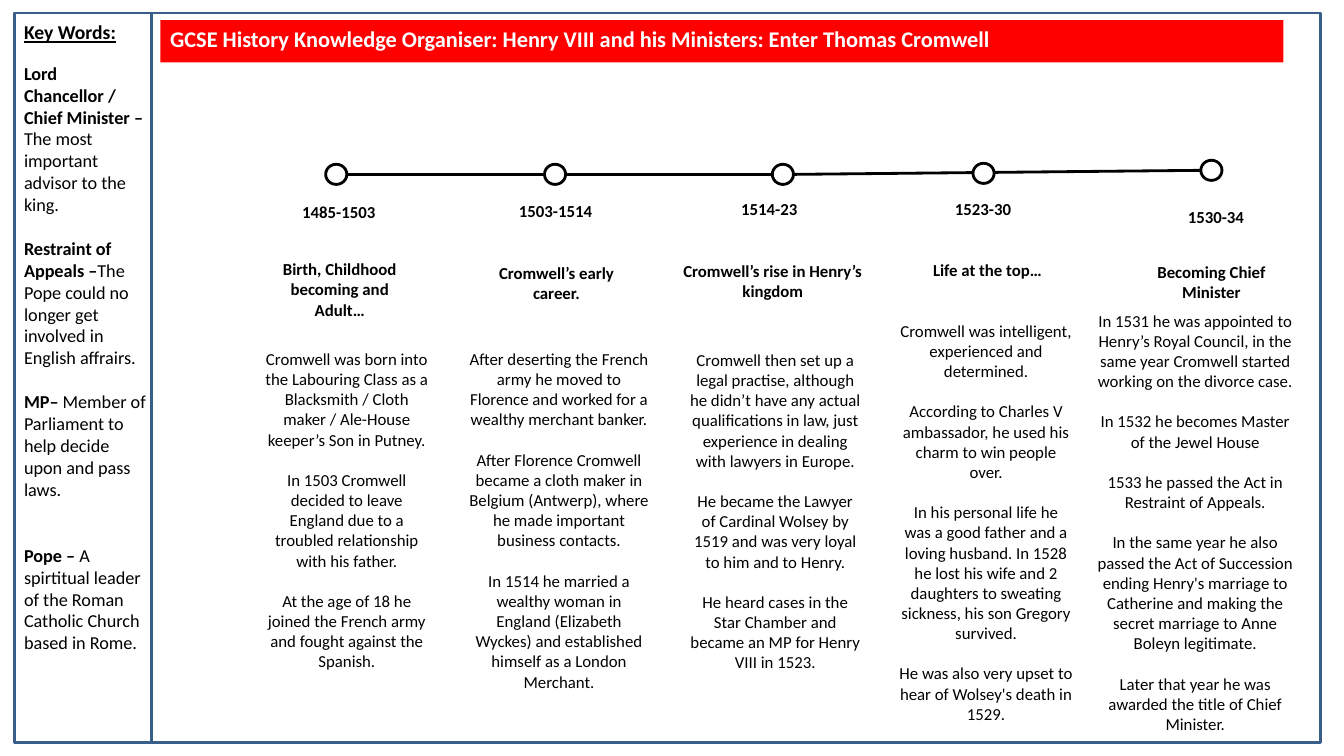
from pptx import Presentation
from pptx.dml.color import RGBColor
from pptx.enum.shapes import MSO_CONNECTOR, MSO_SHAPE
from pptx.enum.text import MSO_ANCHOR, PP_ALIGN
from pptx.oxml.ns import qn
from pptx.util import Inches, Pt
from lxml import etree

# Content
TITLE = "GCSE History Knowledge Organiser: Henry VIII and his Ministers: Enter Thomas Cromwell"
KEY_HEADING = "Key Words:"
# term, meaning, space after in points
KEY_WORDS = [
    ("Lord Chancellor / Chief Minister – ", "The most important advisor to the king.", 15.8),
    ("Restraint of Appeals –", "The Pope could no longer get involved in English affrairs.", 15.8),
    ("MP– ", "Member of Parliament to help decide upon and pass laws.", 31.6),
    ("Pope – ", "A spirtitual leader of the Roman Catholic Church based in Rome.", 0),
]
# Each stage: marker (left, top), then (text, box) for date, heading and story
STAGES = [
    {"marker": (3.23, 1.63),
     "date": ("1485-1503", (2.64, 1.95, 1.44, 0.33)),
     "heading": ("Birth, Childhood becoming and Adult…", (2.65, 2.52, 1.44, 1.02)),
     "story": ([
         "Cromwell was born into the Labouring Class as a Blacksmith / Cloth maker / "
         "Ale-House keeper’s Son in Putney.",
         "In 1503 Cromwell decided to leave England due to a troubled relationship with his father.",
         "At the age of 18 he joined the French army and fought against the Spanish.",
     ], (2.53, 3.41, 1.82, 3.27))},
    {"marker": (5.4, 1.63),
     "date": ("1503-1514", (4.79, 1.94, 1.44, 0.33)),
     "heading": ("Cromwell’s early career.", (4.8, 2.56, 1.44, 0.36)),
     "story": ([
         "After deserting the French army he moved to Florence and worked for a wealthy "
         "merchant banker.",
         "After Florence Cromwell became a cloth maker in Belgium (Antwerp), where he made "
         "important business contacts.",
         "In 1514 he married a wealthy woman in England (Elizabeth Wyckes) and established "
         "himself as a London Merchant.",
     ], (4.55, 3.41, 1.99, 3.39))},
    {"marker": (7.66, 1.63),
     "date": ("1514-23", (6.91, 1.92, 1.44, 0.33)),
     "heading": ("Cromwell’s rise in Henry’s kingdom", (6.55, 2.54, 2.23, 0.88)),
     "story": ([
         "Cromwell then set up a legal practise, although he didn’t have any actual "
         "qualifications in law, just experience in dealing with lawyers in Europe.",
         "He became the Lawyer of Cardinal Wolsey by 1519 and was very loyal to him and to Henry.",
         "He heard cases in the Star Chamber and became an MP for Henry VIII in 1523.",
     ], (6.74, 3.42, 1.9, 3.39))},
    {"marker": (9.65, 1.62),
     "date": ("1523-30", (9.03, 1.92, 1.44, 0.33)),
     "heading": ("Life at the top…", (8.68, 2.53, 2.23, 0.88)),
     "story": ([
         "Cromwell was intelligent, experienced and determined.",
         "According to Charles V ambassador, he used his charm to win people over.",
         "In his personal life he was a good father and a loving husband. In 1528 he lost his "
         "wife and 2 daughters to sweating sickness, his son Gregory survived.",
         "He was also very upset to hear of Wolsey's death in 1529.",
     ], (8.82, 3.13, 1.92, 3.39))},
    {"marker": (11.91, 1.59),
     "date": ("1530-34", (11.34, 2, 1.44, 0.33)),
     "heading": ("Becoming Chief Minister", (11.21, 2.55, 1.61, 0.36)),
     "story": ([
         "In 1531 he was appointed to Henry’s Royal Council, in the same year Cromwell started "
         "working on the divorce case.",
         "In 1532 he becomes Master of the Jewel House",
         "1533 he passed the Act in Restraint of Appeals.",
         "In the same year he also passed the Act of Succession ending Henry's marriage to "
         "Catherine and making the secret marriage to Anne Boleyn legitimate.",
         "Later that year he was awarded the title of Chief Minister.",
     ], (10.74, 3.03, 2.23, 4.3))},
]

FONT = "Calibri"
BLACK = RGBColor(0, 0, 0)
WHITE = RGBColor(255, 255, 255)
RED = RGBColor(255, 0, 0)
BLUE = RGBColor(0x39, 0x5E, 0x89)
MARKER_W, MARKER_H = 0.21, 0.2
STORY_GAP = 14.4  # about one line of 12 pt text

prs = Presentation()
prs.slide_width, prs.slide_height = Inches(13.33), Inches(7.5)
s = prs.slides.add_slide(prs.slide_layouts[6])


def add_shape(kind, box, fill=None, line=None):
    sp = s.shapes.add_shape(kind, *map(Inches, box))
    sp.shadow.inherit = False
    if fill is None:
        sp.fill.background()
    else:
        sp.fill.solid()
        sp.fill.fore_color.rgb = fill
    if line is None:
        sp.line.fill.background()
    else:
        sp.line.color.rgb = line
        sp.line.width = Pt(2)
    return sp


def style(p, size, bold=None, color=BLACK, align=PP_ALIGN.LEFT, after=0):
    p.font.name, p.font.size, p.font.bold = FONT, Pt(size), bold
    p.font.color.rgb = color
    p.alignment = align
    p.space_after = Pt(after)


def add_frame(box):
    tf = s.shapes.add_textbox(*map(Inches, box)).text_frame
    tf.word_wrap = True
    return tf


def add_centred(paragraphs, box, bold=False):
    tf = add_frame(box)
    for i, text in enumerate(paragraphs):
        p = tf.paragraphs[0] if i == 0 else tf.add_paragraph()
        p.text = text
        last = i == len(paragraphs) - 1
        style(p, 12, bold, align=PP_ALIGN.CENTER, after=0 if last else STORY_GAP)


# Frame and title banner
add_shape(MSO_SHAPE.RECTANGLE, (0.14, 0.13, 12.96, 7.24), line=BLUE)
tf = add_shape(MSO_SHAPE.RECTANGLE, (1.59, 0.2, 11.14, 0.42), fill=RED).text_frame
tf.vertical_anchor = MSO_ANCHOR.TOP
tf.word_wrap = True
tf.text = TITLE
style(tf.paragraphs[0], 16, True, WHITE)

# Key words panel
add_shape(MSO_SHAPE.RECTANGLE, (0.14, 0.13, 1.36, 7.24), line=BLUE)
tf = add_frame((0.14, 0.15, 1.43, 7.21))
p = tf.paragraphs[0]
p.text = KEY_HEADING
style(p, 14, True, after=13.2)
p.font.underline = True
for term, meaning, after in KEY_WORDS:
    p = tf.add_paragraph()
    style(p, 13, after=after)
    for text, bold in ((term, True), (meaning, False)):
        r = p.add_run()
        r.text = text
        r.font.bold = bold

# Timeline: one line to the middle marker, one onwards to the last
for start, end in ((0, 2), (2, 4)):
    (x1, y1), (x2, y2) = STAGES[start]["marker"], STAGES[end]["marker"]
    line = s.shapes.add_connector(
        MSO_CONNECTOR.STRAIGHT, Inches(x1 + MARKER_W), Inches(y1 + MARKER_H / 2),
        Inches(x2), Inches(y2 + MARKER_H / 2))
    line.line.color.rgb = BLACK
    line.line.width = Pt(2)
    etree.SubElement(line._element.spPr, qn("a:effectLst"))

# Stages
for stage in STAGES:
    add_shape(MSO_SHAPE.OVAL, (*stage["marker"], MARKER_W, MARKER_H), WHITE, BLACK)
    for part in ("date", "heading"):
        text, box = stage[part]
        add_centred([text], box, bold=True)
    add_centred(*stage["story"])

prs.save("out.pptx")
